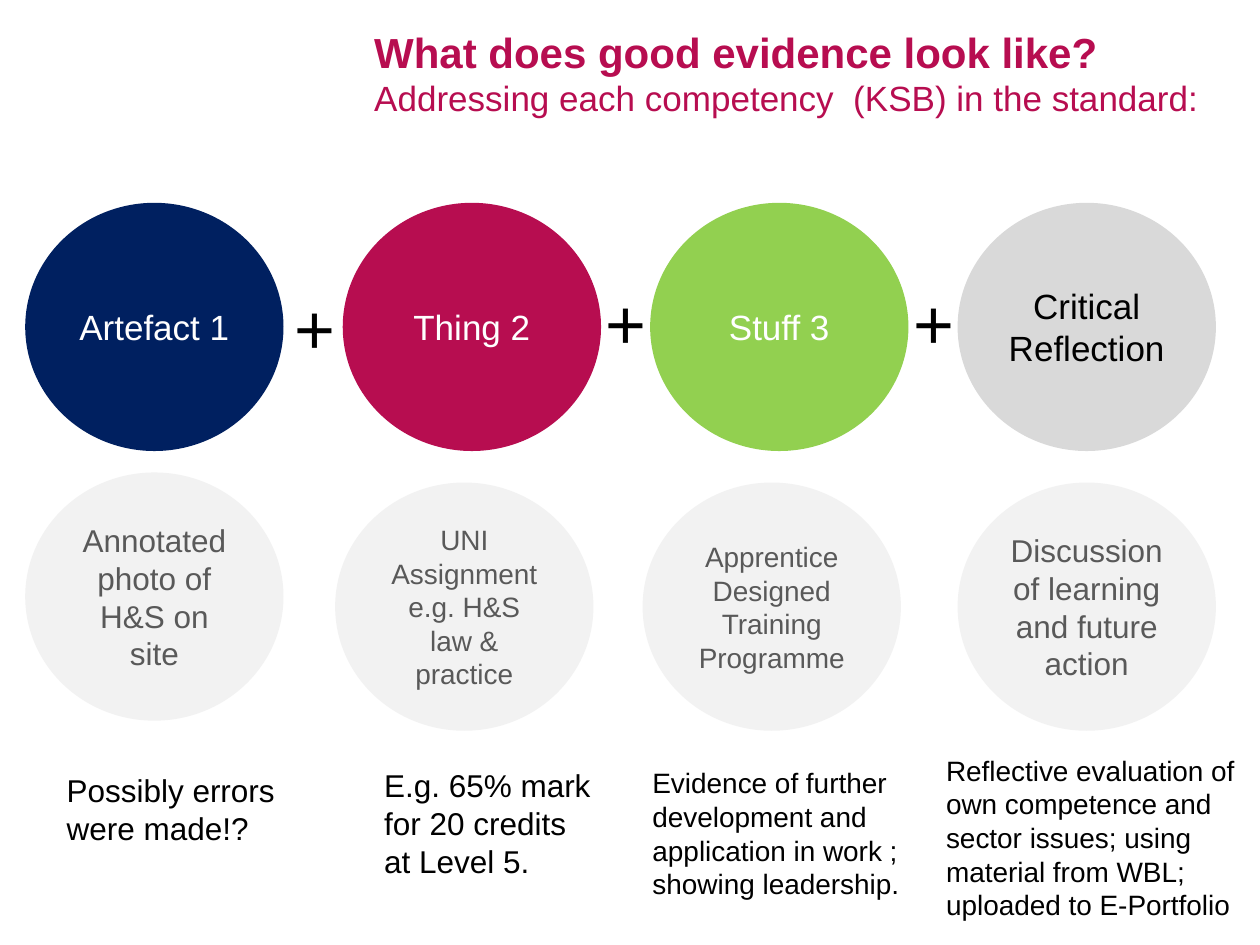
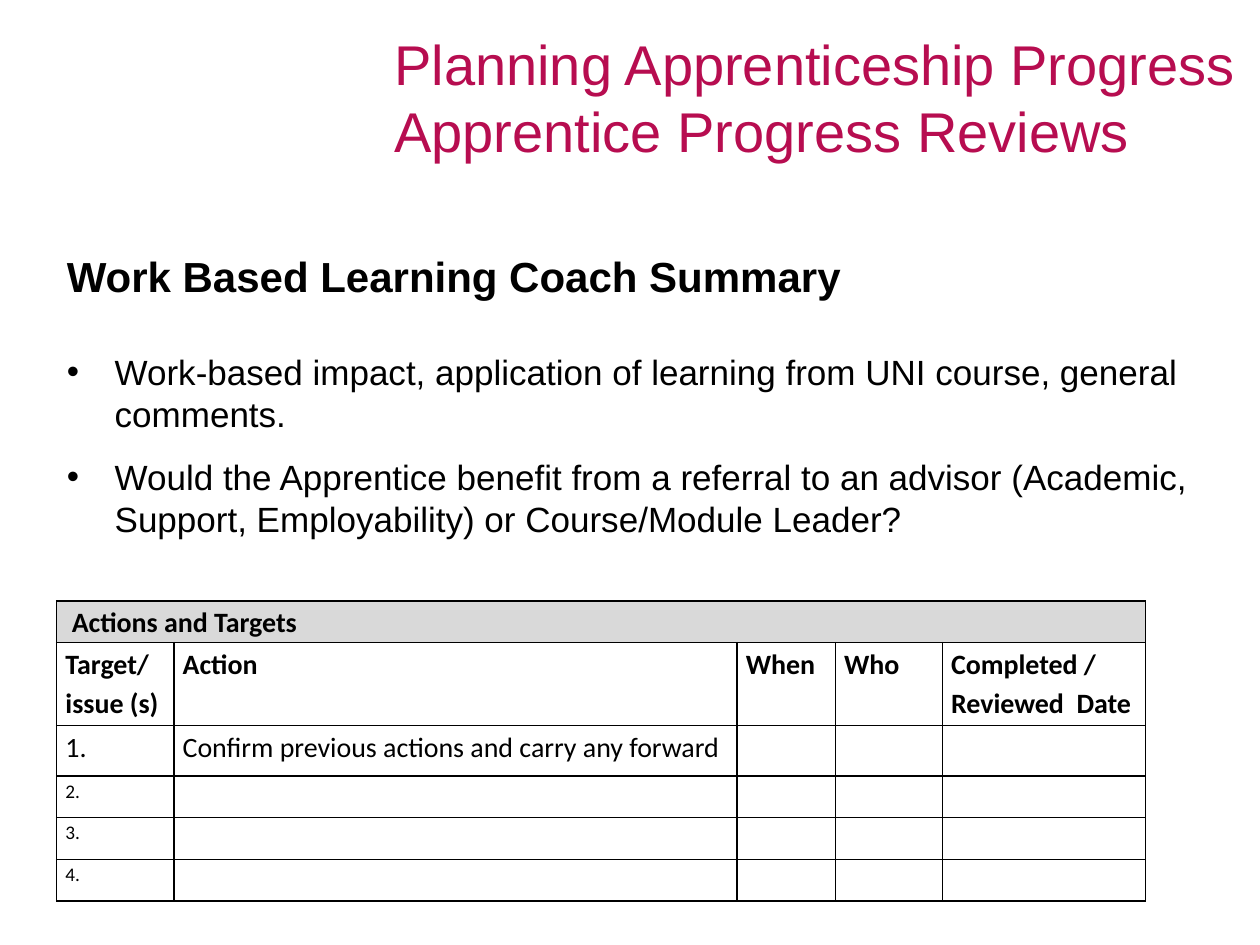
from lxml import etree
from pptx import Presentation
from pptx.dml.color import RGBColor
from pptx.enum import shapes, text
from pptx.oxml import ns
from pptx.util import Inches, Pt

BLACK = RGBColor(0x00, 0x00, 0x00)
WHITE = RGBColor(0xFF, 0xFF, 0xFF)
NAVY = RGBColor(0x00, 0x20, 0x60)
PINK = RGBColor(0xB7, 0x0D, 0x50)
GREEN = RGBColor(0x92, 0xD0, 0x50)
SILVER = RGBColor(0xD9, 0xD9, 0xD9)
PALE = RGBColor(0xF2, 0xF2, 0xF2)
GREY = RGBColor(0x59, 0x59, 0x59)
LEFT = text.PP_ALIGN.LEFT
CENTER = text.PP_ALIGN.CENTER
MIDDLE = text.MSO_ANCHOR.MIDDLE

PARTS = [
    ("Artefact 1", NAVY, WHITE, 0.2),
    ("Thing 2", PINK, WHITE, 2.72),
    ("Stuff 3", GREEN, WHITE, 5.16),
    ("Critical Reflection", SILVER, BLACK, 7.6),
]
SAMPLES = [
    ("Annotated photo of H&S on site", 18, 0.2, 3.75),
    ("UNI Assignment e.g. H&S law & practice", 16, 2.66, 3.83),
    ("Apprentice Designed Training Programme", 16, 5.1, 3.83),
    ("Discussion of learning and future action", 18, 7.6, 3.83),
]
NOTES = [
    ("Possibly errors were made!?", 18, (0.43, 6.07, 1.89, 0.71)),
    ("E.g. 65% mark for 20 credits at Level 5.", 18, (2.95, 6.03, 1.89, 1.01)),
    ("Evidence of further development and application in work ; "
     "showing leadership.", 16, (5.08, 6.03, 2.2, 1.18)),
    ("Reflective evaluation of own competence and sector issues; using "
     "material from WBL;\nuploaded to E-Portfolio", 16,
     (7.41, 5.93, 2.59, 1.45)),
]
PLUSES = [(2.24, 2.21), (4.71, 2.17), (7.15, 2.17)]
POINTS = [
    "Work-based impact, application of learning from UNI course, general "
    "comments.",
    "Would the Apprentice benefit from a referral to an advisor (Academic, "
    "Support, Employability) or Course/Module Leader?",
]
HEADS = ["Target/\nissue (s)", "Action", "When", "Who",
         "Completed / Reviewed  Date"]
ROWS = [
    [" Actions and Targets", "", "", "", ""],
    HEADS,
    ["1.", "Confirm previous actions and carry any forward", "", "", ""],
    *[[f"{n}.", "", "", "", ""] for n in range(2, 5)],
]
WIDTHS = [0.93, 4.47, 0.78, 0.85, 1.61]
HEIGHTS = [0.33, 0.66, 0.4, 0.33, 0.33, 0.33]


def write(par, words, size=20, color=BLACK, bold=False, font="Arial",
          align=LEFT, line=1.0, after=0):
    """Add a run to a paragraph and format both."""
    par.alignment, par.line_spacing = align, line
    par.space_before, par.space_after = Pt(0), Pt(after)
    run = par.add_run()
    run.text = words
    run.font.name, run.font.size, run.font.bold = font, Pt(size), bold
    run.font.color.rgb = color


def fill(frame, words, **fmt):
    """Write each line of the words as one paragraph."""
    for num, row in enumerate(words.split("\n")):
        par = frame.add_paragraph() if num else frame.paragraphs[0]
        write(par, row, **fmt)


def place(shape, box):
    """Move and size a shape to a box in inches."""
    shape.left, shape.top, shape.width, shape.height = map(Inches, box)


def title(slide, box, lines):
    """Set the title as lines of (words, size, bold) in one paragraph."""
    head = slide.shapes.title
    place(head, box)
    frame = head.text_frame
    frame.auto_size = text.MSO_AUTO_SIZE.NONE
    frame.vertical_anchor = MIDDLE
    par = frame.paragraphs[0]
    for num, (words, size, bold) in enumerate(lines):
        if num:
            par.add_line_break()
        write(par, words, size=size, bold=bold, color=PINK)
    return frame


def disc(slide, left, top, words, back, **fmt):
    """Draw a filled ellipse with centred words."""
    oval = slide.shapes.add_shape(
        shapes.MSO_SHAPE.OVAL, *map(Inches, (left, top, 2.05, 1.97)))
    oval.shadow.inherit = False
    oval.fill.solid()
    oval.fill.fore_color.rgb = back
    oval.line.fill.background()
    oval.text_frame.vertical_anchor = MIDDLE
    fill(oval.text_frame, words, align=CENTER, **fmt)


def label(slide, box, words, wrap=True, **fmt):
    """Add a text box."""
    frame = slide.shapes.add_textbox(*map(Inches, box)).text_frame
    frame.word_wrap = wrap
    fill(frame, words, **fmt)


def bullet(par, mark="", indent=0.0):
    """Give a paragraph a hanging bullet, or none."""
    props = par._p.get_or_add_pPr()
    props.set("marL", str(Inches(indent)))
    props.set("indent", str(-Inches(indent)))
    if mark:
        etree.SubElement(props, ns.qn("a:buChar"), char=mark)
    else:
        etree.SubElement(props, ns.qn("a:buNone"))


def summary(slide):
    """Fill the body with a heading and bulleted points."""
    body = slide.placeholders[1]
    place(body, (0.43, 1.94, 9.29, 2.42))
    frame = body.text_frame
    frame.auto_size = text.MSO_AUTO_SIZE.NONE
    head = frame.paragraphs[0]
    write(head, "Work Based Learning Coach Summary", size=24, bold=True,
          after=28)
    bullet(head)
    for point in POINTS:
        par = frame.add_paragraph()
        write(par, point, after=12)
        bullet(par, "•", 0.38)


def border(cell):
    """Draw a thin black line on every side of a cell."""
    props = cell._tc.get_or_add_tcPr()
    for num, side in enumerate("LRTB"):
        edge = etree.Element(ns.qn(f"a:ln{side}"), w=str(Pt(1)))
        paint = etree.SubElement(edge, ns.qn("a:solidFill"))
        etree.SubElement(paint, ns.qn("a:srgbClr"), val=str(BLACK))
        props.insert(num, edge)


def targets(slide):
    """Build the table of actions and targets."""
    box = map(Inches, (0.45, 4.77, sum(WIDTHS), sum(HEIGHTS)))
    grid = slide.shapes.add_table(len(ROWS), len(WIDTHS), *box).table
    grid.first_row = grid.horz_banding = False
    for col, width in zip(grid.columns, WIDTHS):
        col.width = Inches(width)
    for num, (row, height) in enumerate(zip(ROWS, HEIGHTS)):
        grid.rows[num].height = Inches(height)
        for cell, words in zip(grid.rows[num].cells, row):
            cell.margin_left = cell.margin_right = Inches(0.07)
            cell.margin_top = cell.margin_bottom = 0
            if num:
                cell.fill.background()
            else:
                cell.fill.solid()
                cell.fill.fore_color.rgb = SILVER
            border(cell)
            if words:
                fill(cell.text_frame, words, size=16 if num < 3 else 11,
                     bold=num < 2, font="Calibri", line=1.15)
            else:
                cell.text_frame.paragraphs[0].font.size = Pt(11)
    grid.cell(0, 0).merge(grid.cell(0, len(WIDTHS) - 1))


def evidence(deck):
    """Build the slide on good evidence."""
    slide = deck.slides.add_slide(deck.slide_layouts[5])
    frame = title(slide, (2.87, 0.21, 8.98, 1.25), [
        ("What does good evidence look like?", 24, True),
        ("Addressing each competency  (KSB) in the standard:", 20, False)])
    frame.vertical_anchor = text.MSO_ANCHOR.TOP
    frame.margin_top = 0
    for left, top in PLUSES:
        label(slide, (left, top, 0.53, 0.77), "+", wrap=False, size=40)
    for words, size, left, top in SAMPLES:
        disc(slide, left, top, words, PALE, size=size, color=GREY)
    for words, size, box in NOTES:
        label(slide, box, words, size=size)
    for words, back, color, left in PARTS:
        disc(slide, left, 1.61, words, back, color=color)


def review(deck):
    """Build the slide on progress reviews."""
    slide = deck.slides.add_slide(deck.slide_layouts[1])
    title(slide, (3.03, 0.14, 7.95, 1.25), [
        ("Planning Apprenticeship Progress", 32, False),
        ("Apprentice Progress Reviews", 32, False)])
    summary(slide)
    targets(slide)


def main():
    """Build and save the deck."""
    deck = Presentation()
    deck.slide_width, deck.slide_height = Inches(10), Inches(7.5)
    evidence(deck)
    review(deck)
    deck.save("out.pptx")


if __name__ == "__main__":
    main()
